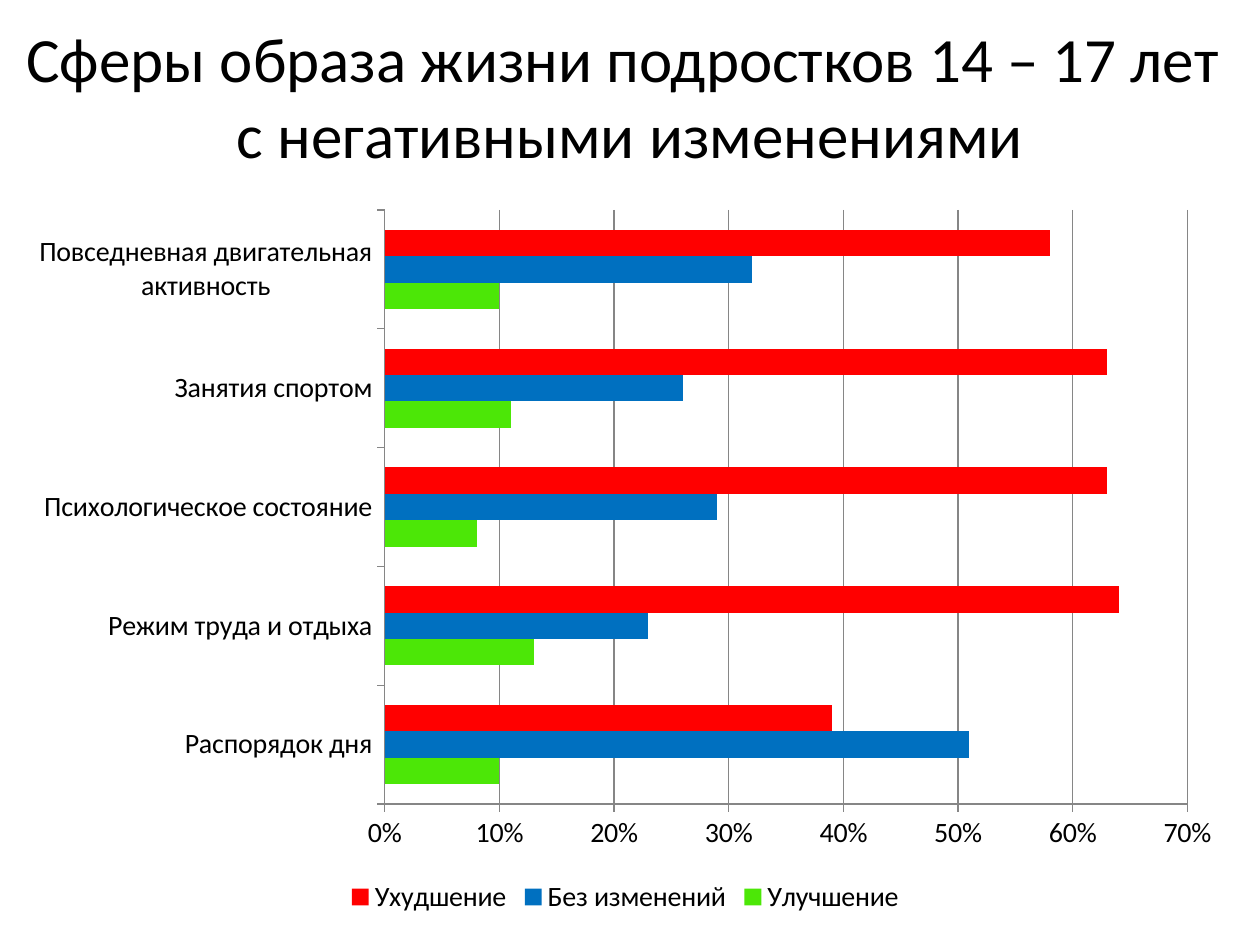
import pptx
import pptx.chart.data
import pptx.dml.color
import pptx.enum.chart
import pptx.enum.text
import pptx.util
from pptx.util import Cm


def colour(value):
    return pptx.dml.color.RGBColor.from_string(value)


deck = pptx.Presentation()
deck.slide_width, deck.slide_height = Cm(25.4), Cm(19.05)
page = deck.slides.add_slide(deck.slide_layouts[5])

# Title
title = page.shapes.title
title.left, title.top, title.width, title.height = Cm(0), Cm(0.33), Cm(25.4), Cm(3.18)
frame = title.text_frame
frame.text = "Сферы образа жизни подростков 14 – 17 лет \vс негативными изменениями"
frame.vertical_anchor = pptx.enum.text.MSO_ANCHOR.MIDDLE
para = frame.paragraphs[0]
para.alignment = pptx.enum.text.PP_ALIGN.CENTER
para.font.name = "Calibri"
para.font.size = pptx.util.Pt(36)
para.font.color.rgb = colour("000000")

# Chart data, categories from bottom to top
changes = [
    ("Улучшение", "4CE707", (0.10, 0.13, 0.08, 0.11, 0.10)),
    ("Без изменений", "0070C0", (0.51, 0.23, 0.29, 0.26, 0.32)),
    ("Ухудшение", "FF0000", (0.39, 0.64, 0.63, 0.63, 0.58)),
]
data = pptx.chart.data.CategoryChartData(number_format="0%")
data.categories = [
    "Распорядок дня",
    "Режим труда и отдыха",
    "Психологическое состояние",
    "Занятия спортом",
    "Повседневная двигательная активность",
]
for name, fill, values in changes:
    data.add_series(name, values)

chart = page.shapes.add_chart(
    pptx.enum.chart.XL_CHART_TYPE.BAR_CLUSTERED,
    Cm(0.3), Cm(3.94), Cm(24.61), Cm(14.6), data,
).chart
chart.has_title = False
chart.font.name = "Calibri"
chart.font.size = pptx.util.Pt(16)
chart.font.color.rgb = colour("000000")

plot = chart.plots[0]
plot.gap_width = 150
plot.vary_by_categories = False
for series, (name, fill, values) in zip(plot.series, changes):
    series.format.fill.solid()
    series.format.fill.fore_color.rgb = colour(fill)

# Axes and legend
scale = chart.value_axis
scale.minimum_scale, scale.maximum_scale, scale.major_unit = 0, 0.7, 0.1
scale.tick_labels.number_format = "0%"
scale.tick_labels.number_format_is_linked = False
scale.has_major_gridlines = True
for axis in (chart.category_axis, scale):
    axis.major_tick_mark = pptx.enum.chart.XL_TICK_MARK.OUTSIDE
for lines in (chart.category_axis, scale, scale.major_gridlines):
    lines.format.line.color.rgb = colour("868686")
    lines.format.line.width = pptx.util.Pt(0.75)

chart.has_legend = True
chart.legend.position = pptx.enum.chart.XL_LEGEND_POSITION.BOTTOM
chart.legend.include_in_layout = False

deck.save("out.pptx")
